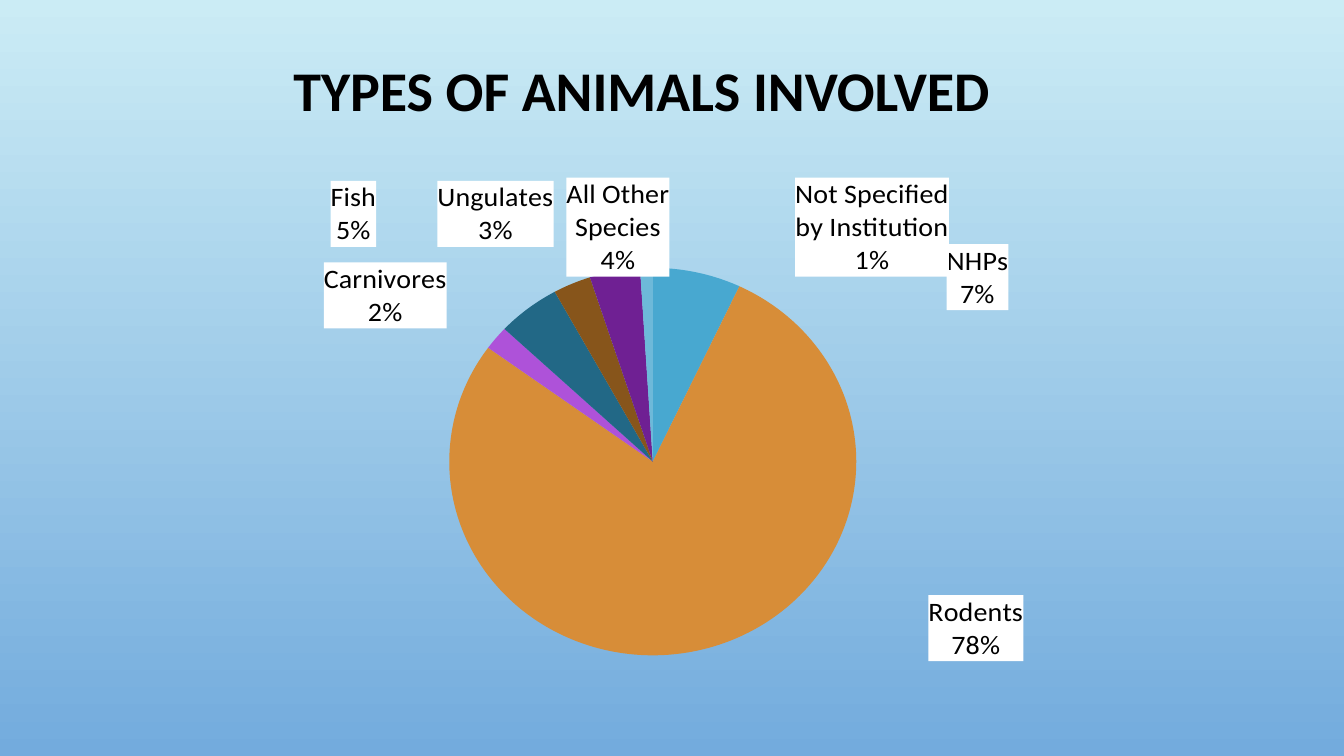
from math import cos, pi, sin
from pptx import Presentation
from pptx.chart.data import CategoryChartData as Data
from pptx.dml.color import RGBColor as RGB
from pptx.enum.chart import XL_CHART_TYPE as Kind, XL_LABEL_POSITION as Pos
from pptx.enum.text import MSO_ANCHOR as Anchor, PP_ALIGN as Align
from pptx.oxml import parse_xml
from pptx.oxml.ns import nsdecls
from pptx.util import Inches, Pt

TITLE = "TYPES OF ANIMALS INVOLVED"
HEX = {"top": "CBECF5", "base": "73ABDD", "ink": "000000", "paper": "FFFFFF"}
SLICES = [
    ("NHPs", 7, "48A8D0", (9.39, 3.0)),
    ("Rodents", 78, "D78D38", (9.21, 5.97)),
    ("Carnivores", 2, "AE52D9", (4.43, 3.19)),
    ("Fish", 5, "226886", (3.73, 2.34)),
    ("Ungulates", 3, "87551B", (5.49, 2.34)),
    ("All Other Species", 4, "6F2093", (6.64, 2.64)),
    ("Not Specified by Institution", 1, "6DB9D9", (8.65, 2.64)),
]
HEAD = (2.81, 0.47, 7.55, 0.92)
FRAME = (1.92, 1.62, 9.11, 5.53)
PLOT = {"x": 0.08, "y": 0.17, "w": 0.84, "h": 0.73}
GAP = 0.06


def ink(name):
    return RGB.from_string(HEX[name])


def style(font, **form):
    font.color.rgb = ink("ink")
    for key, val in {"name": "Calibri", **form}.items():
        setattr(font, key, val)


def layout(parts, inner=False):
    target = '<c:layoutTarget val="inner"/>' if inner else ""
    modes = '<c:xMode val="edge"/><c:yMode val="edge"/>' if inner else ""
    body = "".join(f'<c:{k} val="{v:.4f}"/>' for k, v in parts.items())
    return f"<c:manualLayout>{target}{modes}{body}</c:manualLayout>"


def label(i, shift):
    shows = {"LegendKey": 0, "Val": 0, "CatName": 1, "SerName": 0,
             "Percent": 1, "BubbleSize": 0}
    flags = "".join(f'<c:show{k} val="{v}"/>' for k, v in shows.items())
    return parse_xml(
        f'<c:dLbl {nsdecls("c", "a")}><c:idx val="{i}"/>'
        f"<c:layout>{layout(shift)}</c:layout>"
        f'<c:spPr><a:solidFill><a:srgbClr val="{HEX["paper"]}"/></a:solidFill></c:spPr>'
        f'<c:dLblPos val="outEnd"/>{flags}<c:separator>\n</c:separator></c:dLbl>')


def add_title(slide):
    title = slide.shapes.title
    title.left, title.top, title.width, title.height = map(Inches, HEAD)
    frame = title.text_frame
    frame.text = TITLE
    frame.word_wrap = True
    frame.vertical_anchor = Anchor.MIDDLE
    para = frame.paragraphs[0]
    para.alignment, para.line_spacing = Align.LEFT, 0.9
    style(para.runs[0].font, size=Pt(40), bold=True)


def add_pie(slide):
    data = Data()
    data.categories = [row[0] for row in SLICES]
    data.add_series("Series 1", [row[1] for row in SLICES])
    chart = slide.shapes.add_chart(Kind.PIE, *map(Inches, FRAME), data).chart
    chart.has_title = chart.has_legend = False
    style(chart.font, size=Pt(20))
    plot = chart.plots[0]
    plot.vary_by_categories = True
    area = chart._chartSpace.chart.plotArea
    for old in area.findall("{*}layout"):
        area.remove(old)
    area.insert(0, parse_xml(
        f'<c:layout {nsdecls("c")}>{layout(PLOT, True)}</c:layout>'))

    series = plot.series[0]
    labels = series.data_labels
    form = {"show_value": False, "show_category_name": True,
            "show_percentage": True, "number_format": "0%",
            "number_format_is_linked": False, "position": Pos.OUTSIDE_END}
    for key, val in form.items():
        setattr(labels, key, val)
    style(labels.font, size=Pt(20))
    for lead in labels._element.findall("{*}showLeaderLines"):
        lead.set("val", "0")

    left, top, wide, high = FRAME
    radius = PLOT["h"] * high / 2
    mid_x = left + wide / 2
    mid_y = top + PLOT["y"] * high + radius
    total, done = sum(row[1] for row in SLICES), 0
    for i, (name, share, color, (x, y)) in enumerate(SLICES):
        angle = 2 * pi * (done + share / 2) / total
        done += share
        home_x = mid_x + (radius + GAP) * sin(angle)
        home_y = mid_y - (radius + GAP) * cos(angle)
        shift = {"x": (x - home_x) / wide, "y": (y - home_y) / high}
        labels._element.insert(i, label(i, shift))
        fill = series.points[i].format.fill
        fill.solid()
        fill.fore_color.rgb = RGB.from_string(color)


def main():
    deck = Presentation()
    deck.slide_width, deck.slide_height = Inches(13.33), Inches(7.5)
    slide = deck.slides.add_slide(deck.slide_layouts[5])
    back = slide.background.fill
    back.gradient()
    back.gradient_angle = 270
    for stop, name, place in zip(back.gradient_stops, ("top", "base"), (0, 1)):
        stop.color.rgb, stop.position = ink(name), place
    add_title(slide)
    add_pie(slide)
    deck.save("out.pptx")


if __name__ == "__main__":
    main()
